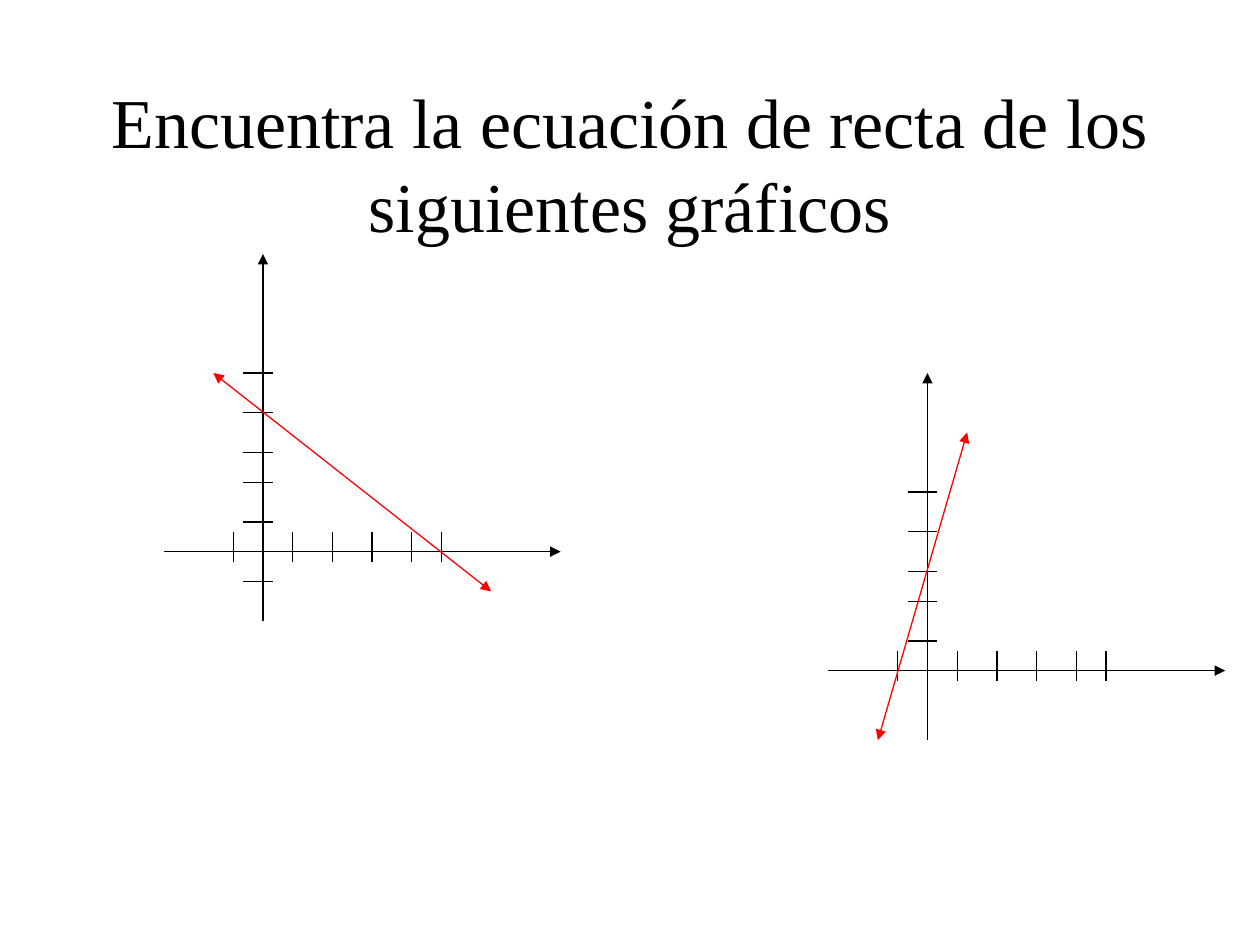
import pptx
import pptx.util
import pptx.dml.color
import pptx.enum.shapes
import pptx.enum.text
import pptx.oxml.ns
from lxml import etree

Pt = pptx.util.Pt
BLACK = pptx.dml.color.RGBColor(0x00, 0x00, 0x00)
RED = pptx.dml.color.RGBColor(0xFF, 0x00, 0x00)
UNIT = 5.67  # one grid step, 2 mm


def add_text(slide, text, left, top, width, height, *, font, size, color):
    box = slide.shapes.add_textbox(Pt(left), Pt(top), Pt(width), Pt(height))
    frame = box.text_frame
    frame.word_wrap = True
    frame.vertical_anchor = pptx.enum.text.MSO_ANCHOR.MIDDLE
    paragraph = frame.paragraphs[0]
    paragraph.text = text
    paragraph.alignment = pptx.enum.text.PP_ALIGN.CENTER
    paragraph.font.name = font
    paragraph.font.size = Pt(size)
    paragraph.font.color.rgb = color


def add_line(group, origin, start, end, color=BLACK, arrows=()):
    """Draw a line between two points in grid steps from the origin, y upwards."""
    (x1, y1), (x2, y2) = [
        (Pt(origin[0] + x * UNIT), Pt(origin[1] - y * UNIT)) for x, y in (start, end)
    ]
    line = group.shapes.add_connector(
        pptx.enum.shapes.MSO_CONNECTOR.STRAIGHT, x1, y1, x2, y2
    )
    line.line.color.rgb = color
    line.line.width = Pt(0.75)
    outline = line.line._get_or_add_ln()
    for arrow in arrows:
        etree.SubElement(outline, pptx.oxml.ns.qn("a:" + arrow), type="triangle")
    etree.SubElement(line._element.spPr, pptx.oxml.ns.qn("a:effectLst"))


presentation = pptx.Presentation()
presentation.slide_width = Pt(720)
presentation.slide_height = Pt(540)
slide = presentation.slides.add_slide(presentation.slide_layouts[6])

# Title
add_text(
    slide, "Encuentra la ecuación de recta de los siguientes gráficos",
    54, 48, 612, 90, font="Times New Roman", size=40, color=BLACK,
)

# Graphs: origin in points, ticks on the y axis, ends of the red line
x_ticks = (-3, 3, 7, 11, 15, 18)
y_ticks = (3, 7, 10, 14, 18)
graphs = [
    ((150.25, 315.25), (-3,) + y_ticks, (-5, 18), (23, -4)),
    ((530, 383.25), y_ticks, (4, 24), (-5, -7)),
]
for origin, vertical_ticks, line_start, line_end in graphs:
    group = slide.shapes.add_group_shape()
    # Axes
    add_line(group, origin, (-10, 0), (30, 0), arrows=("tailEnd",))
    add_line(group, origin, (0, -7), (0, 30), arrows=("tailEnd",))
    # Tick marks
    for x in x_ticks:
        add_line(group, origin, (x, 2), (x, -1))
    for y in vertical_ticks:
        add_line(group, origin, (-2, y), (1, y))
    # Straight line to be found
    add_line(group, origin, line_start, line_end, RED, ("headEnd", "tailEnd"))

presentation.save("out.pptx")
